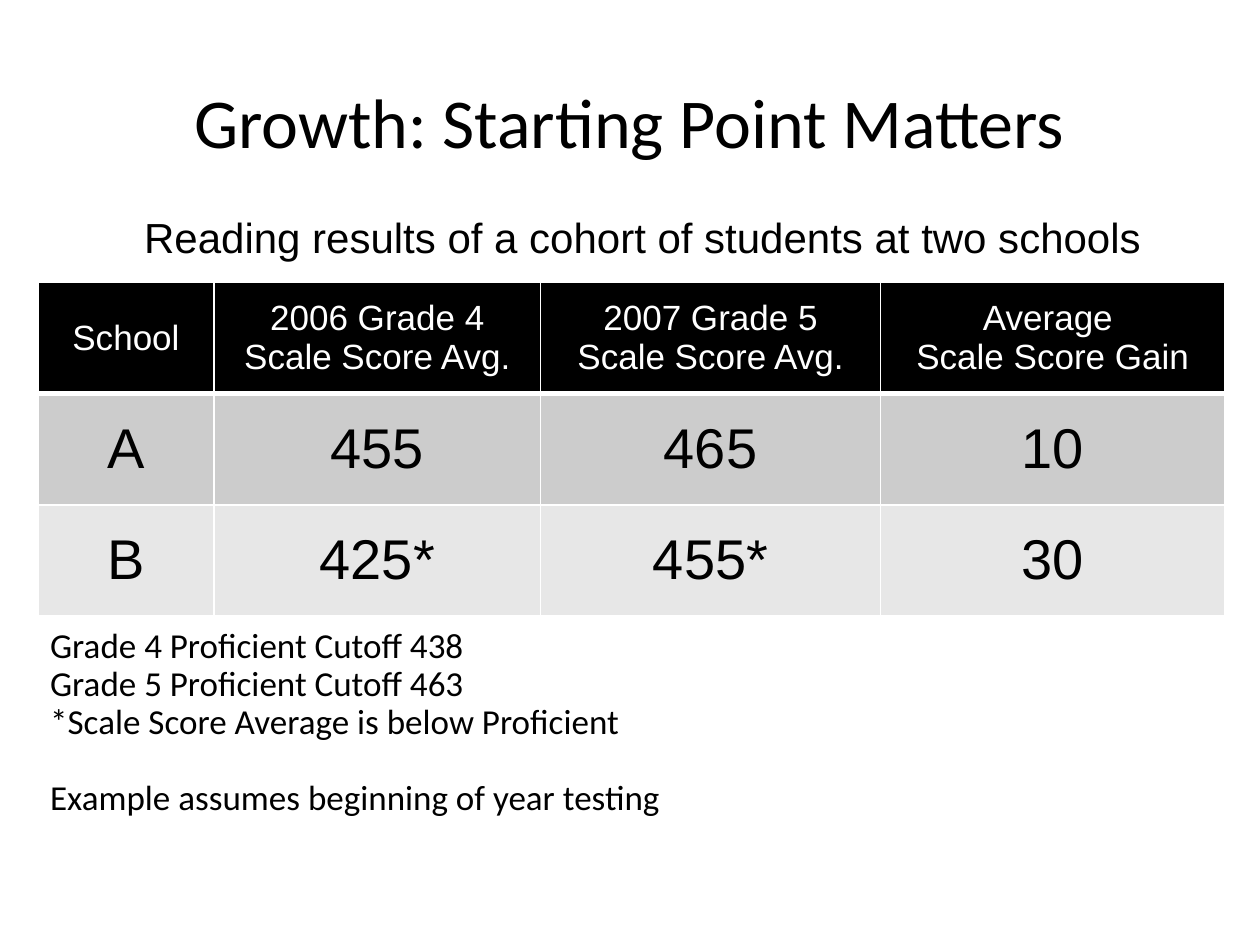
from dataclasses import dataclass

from lxml import etree
from pptx import Presentation
from pptx import util as u
from pptx.dml.color import RGBColor
from pptx.enum import text
from pptx.oxml.ns import qn


@dataclass(frozen=True)
class Theme:
    """Colours, fonts and type sizes of the slide."""
    ink: str = "000000"
    paper: str = "FFFFFF"
    bands: tuple = ("CCCCCC", "E7E7E7")
    heading_font: str = "Calibri"
    data_font: str = "Arial"
    title: int = 40
    subtitle: int = 24
    small: int = 20
    score: int = 32


THEME = Theme()
CENTER = text.PP_ALIGN.CENTER
MIDDLE = text.MSO_ANCHOR.MIDDLE


def write_lines(frame, lines, font, size, color, align=None):
    """Write one paragraph per line and return the paragraphs."""
    frame.text = "\n".join(lines)
    for para in frame.paragraphs:
        para.alignment = align
        para.font.name = font
        para.font.size = u.Pt(size)
        para.font.color.rgb = RGBColor.from_string(color)
    return frame.paragraphs


def add_text(page, place, lines, font, size, align=None, anchor=text.MSO_ANCHOR.TOP):
    """Add a wrapping text box and return its paragraphs."""
    box = page.shapes.add_textbox(*map(u.Inches, place))
    box.text_frame.word_wrap = True
    box.text_frame.vertical_anchor = anchor
    return write_lines(box.text_frame, lines, font, size, THEME.ink, align)


def add_notes(page, place, lines, closing):
    """Add hanging-indent footnotes with a closing remark one line apart."""
    paras = add_text(page, place, [*lines, closing], THEME.heading_font, THEME.small)
    for para in paras:
        para.line_spacing = 0.9
        props = para._p.get_or_add_pPr()
        props.set("marL", str(u.Inches(0.67)))
        props.set("indent", str(u.Inches(-0.67)))
    paras[-1].space_before = u.Pt(22)


def set_borders(cell, **widths):
    """Draw the cell's borders in the paper colour, widths in points."""
    props = cell._tc.get_or_add_tcPr()
    for place, (side, width) in enumerate(widths.items()):
        line = etree.Element(qn(f"a:ln{side}"), w=str(u.Pt(width)))
        fill = etree.SubElement(line, qn("a:solidFill"))
        etree.SubElement(fill, qn("a:srgbClr"), val=THEME.paper)
        props.insert(place, line)


def style_cell(cell, lines, size, color, fill, top, bottom):
    """Fill one table cell with centred text, a colour and borders."""
    write_lines(cell.text_frame, lines, THEME.data_font, size, color, CENTER)
    cell.vertical_anchor = MIDDLE
    cell.fill.solid()
    cell.fill.fore_color.rgb = RGBColor.from_string(fill)
    set_borders(cell, L=1, R=1, T=top, B=bottom)


def add_score_table(page, place, widths, header, rows):
    """Add the score table with a dark header and banded rows."""
    table = page.shapes.add_table(len(rows) + 1, len(widths), *map(u.Inches, place)).table
    for column, width in zip(table.columns, widths):
        column.width = u.Inches(width)
    for cell, lines in zip(table.rows[0].cells, header):
        style_cell(cell, lines, THEME.small, THEME.paper, THEME.ink, 1, 3)
    for number, values in enumerate(rows):
        band = THEME.bands[number % 2]
        top = 1 if number else 3
        for cell, value in zip(table.rows[number + 1].cells, values):
            style_cell(cell, [value], THEME.score, THEME.ink, band, top, 1)


def main():
    """Build and save the slide."""
    deck = Presentation()
    deck.slide_width, deck.slide_height = u.Inches(10), u.Inches(7.5)
    page = deck.slides.add_slide(deck.slide_layouts[6])
    add_text(page, (0.83, 0.33, 8.33, 1.25), ["Growth: Starting Point Matters"],
             THEME.heading_font, THEME.title, CENTER, MIDDLE)
    add_score_table(
        page, (0.3, 2.24, 9.41, 2.65), (1.4, 2.59, 2.7, 2.73),
        [["School"], ["2006 Grade 4", "Scale Score Avg."],
         ["2007 Grade 5", "Scale Score Avg."], ["Average ", "Scale Score Gain"]],
        [("A", "455", "465", "10"), ("B", "425*", "455*", "30")])
    add_text(page, (0, 1.63, 10.2, 0.5),
             ["Reading results of a cohort of students at two schools"],
             THEME.data_font, THEME.subtitle, CENTER)
    add_notes(page, (0.3, 4.94, 6.7, 1.62),
              ["Grade 4 Proficient Cutoff 438", "Grade 5 Proficient Cutoff 463",
               "*Scale Score Average is below Proficient"],
              "Example assumes beginning of year testing")
    deck.save("out.pptx")


if __name__ == "__main__":
    main()
